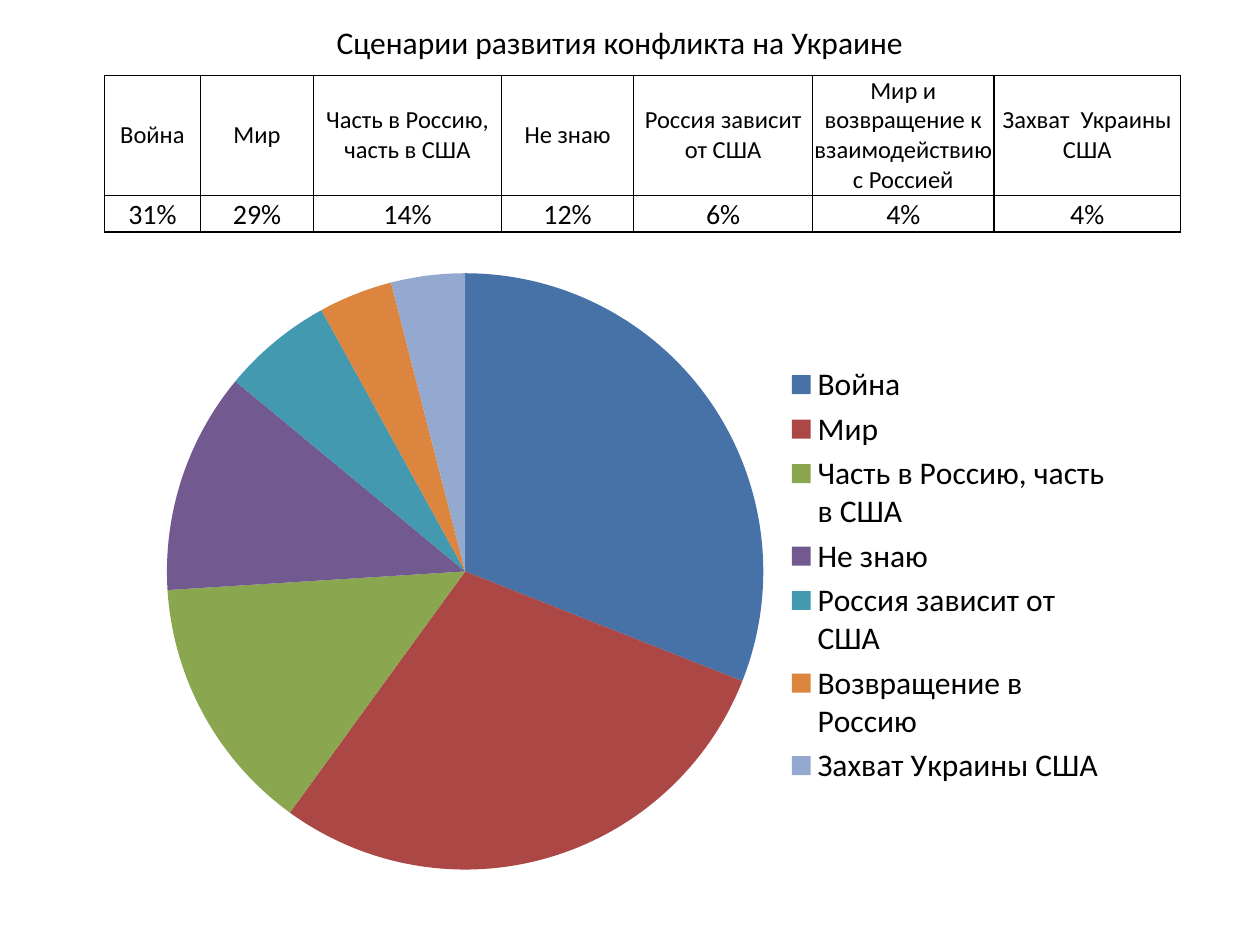
from pptx import Presentation
from pptx.chart.data import CategoryChartData
from pptx.dml.color import RGBColor
from pptx.enum.chart import XL_CHART_TYPE, XL_LEGEND_POSITION
from pptx.enum.text import MSO_ANCHOR, PP_ALIGN
from pptx.oxml import parse_xml
from pptx.oxml.ns import nsdecls
from pptx.util import Inches, Pt

PIE = XL_CHART_TYPE.PIE
LEGEND_RIGHT = XL_LEGEND_POSITION.RIGHT
CENTER = PP_ALIGN.CENTER
MIDDLE, BOTTOM = MSO_ANCHOR.MIDDLE, MSO_ANCHOR.BOTTOM

FONT = "Calibri"
BLACK = "000000"
HEADERS = ["Война", "Мир", "Часть в Россию, часть в США", "Не знаю",
           "Россия зависит от США",
           "Мир и возвращение к взаимодействию с Россией",
           "Захват  Украины США"]
COLUMN_WIDTHS = [0.76, 0.9, 1.49, 1.05, 1.42, 1.44, 1.48]
ROW_HEIGHTS = [0.95, 0.29]
CATEGORIES = HEADERS[:5] + ["Возвращение в Россию", "Захват Украины США"]
SHARES = [31, 29, 14, 12, 6, 4, 4]
SLICE_COLORS = ["4672A8", "AB4744", "8AA64F", "725990",
                "4299B0", "DC853E", "93A9CF"]


def color(hex_string):
    return RGBColor.from_string(hex_string)


def format_font(font, size, hex_string=BLACK):
    font.name = FONT
    font.size = Pt(size)
    font.color.rgb = color(hex_string)


def write_text(frame, text, size=18, align=CENTER):
    frame.word_wrap = True
    paragraph = frame.paragraphs[0]
    paragraph.alignment = align
    run = paragraph.add_run()
    run.text = text
    format_font(run.font, size)


def add_borders(cell, hex_string=BLACK, width=1):
    properties = cell._tc.get_or_add_tcPr()
    for index, side in enumerate(("lnL", "lnR", "lnT", "lnB")):
        properties.insert(index, parse_xml(
            f'<a:{side} {nsdecls("a")} w="{Pt(width)}"><a:solidFill>'
            f'<a:srgbClr val="{hex_string}"/></a:solidFill></a:{side}>'))


def add_title(slide, text):
    box = slide.shapes.add_textbox(Inches(1.14), Inches(0.13),
                                   Inches(7.56), Inches(0.4))
    write_text(box.text_frame, text)


def add_share_table(slide):
    rows = [(HEADERS, 14, MIDDLE),
            ([f"{share}%" for share in SHARES], 16, BOTTOM)]
    table = slide.shapes.add_table(
        len(rows), len(HEADERS), Inches(0.83), Inches(0.6),
        Inches(sum(COLUMN_WIDTHS)), Inches(sum(ROW_HEIGHTS))).table
    table.first_row = table.horz_banding = False
    for column, width in zip(table.columns, COLUMN_WIDTHS):
        column.width = Inches(width)
    for row, height, (texts, size, anchor) in zip(table.rows, ROW_HEIGHTS, rows):
        row.height = Inches(height)
        for cell, text in zip(row.cells, texts):
            cell.margin_left = cell.margin_right = 0
            cell.margin_top = cell.margin_bottom = 0
            cell.vertical_anchor = anchor
            cell.fill.background()
            write_text(cell.text_frame, text, size=size)
            add_borders(cell)


def set_plot_layout(chart, x, y, width, height):
    """Place the plot area, in fractions of the chart's size."""
    plot_area = chart._chartSpace.chart.plotArea
    for layout in plot_area.findall("c:layout", plot_area.nsmap):
        plot_area.remove(layout)
    plot_area.insert(0, parse_xml(
        f'<c:layout {nsdecls("c")}><c:manualLayout>'
        '<c:layoutTarget val="inner"/>'
        '<c:xMode val="edge"/><c:yMode val="edge"/>'
        f'<c:x val="{x}"/><c:y val="{y}"/>'
        f'<c:w val="{width}"/><c:h val="{height}"/>'
        '</c:manualLayout></c:layout>'))


def add_share_pie(slide):
    data = CategoryChartData()
    data.categories = CATEGORIES
    data.add_series("Series 1", SHARES)
    chart = slide.shapes.add_chart(PIE, Inches(1.17), Inches(1.63),
                                   Inches(7.76), Inches(5.87), data).chart
    format_font(chart.font, 18)
    chart.has_title = False
    chart.has_legend = True
    chart.legend.position = LEGEND_RIGHT
    chart.legend.include_in_layout = False
    set_plot_layout(chart, 0.02, 0.09, 0.61, 0.81)
    for index, hex_string in enumerate(SLICE_COLORS):
        fill = chart.plots[0].series[0].points[index].format.fill
        fill.solid()
        fill.fore_color.rgb = color(hex_string)


def main():
    presentation = Presentation()
    presentation.slide_width = Inches(10)
    presentation.slide_height = Inches(7.5)
    slide = presentation.slides.add_slide(presentation.slide_layouts[6])

    # Shares by scenario, then the same shares as a pie
    add_share_table(slide)
    add_share_pie(slide)
    add_title(slide, "Сценарии развития конфликта на Украине")

    presentation.save("out.pptx")


if __name__ == "__main__":
    main()
